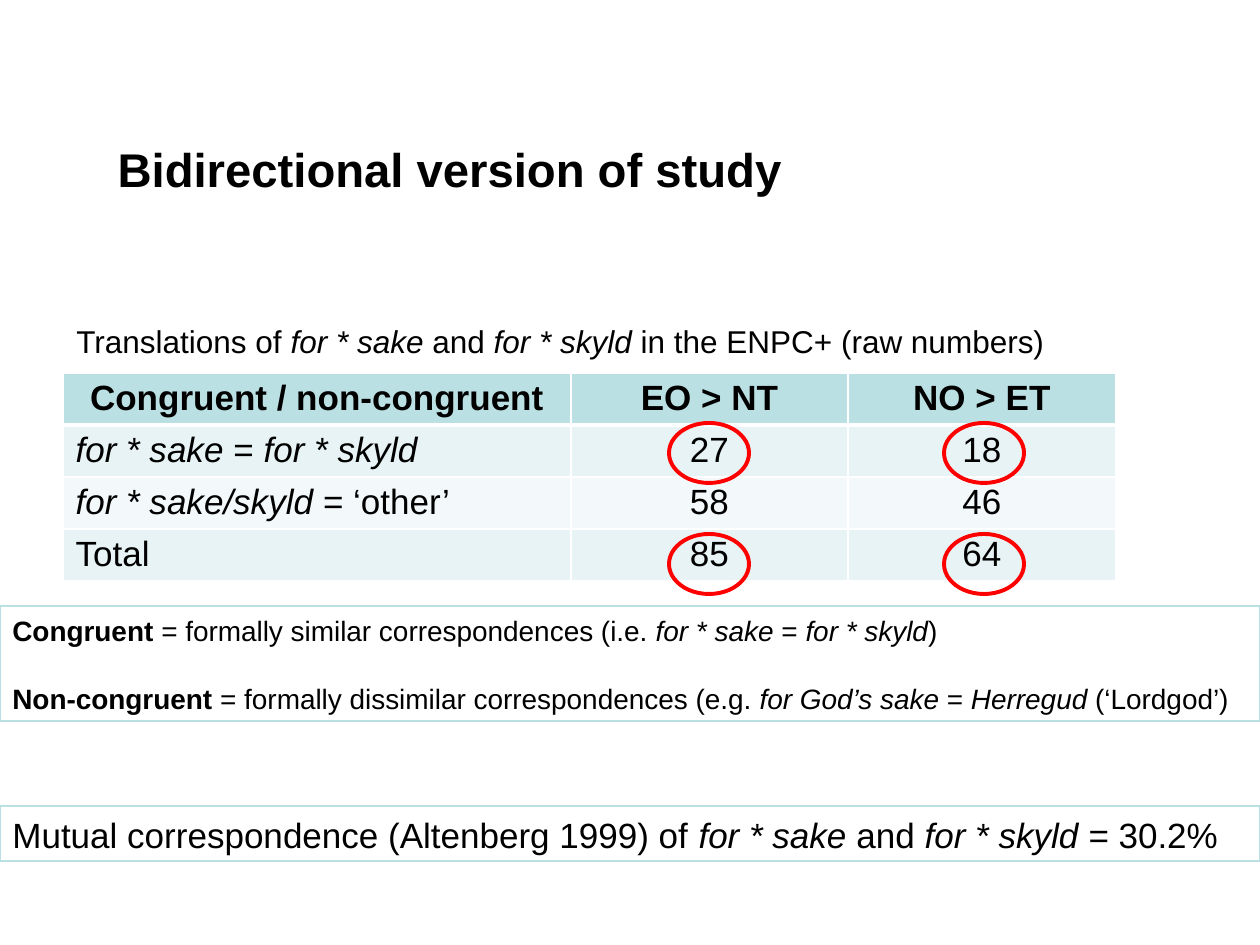
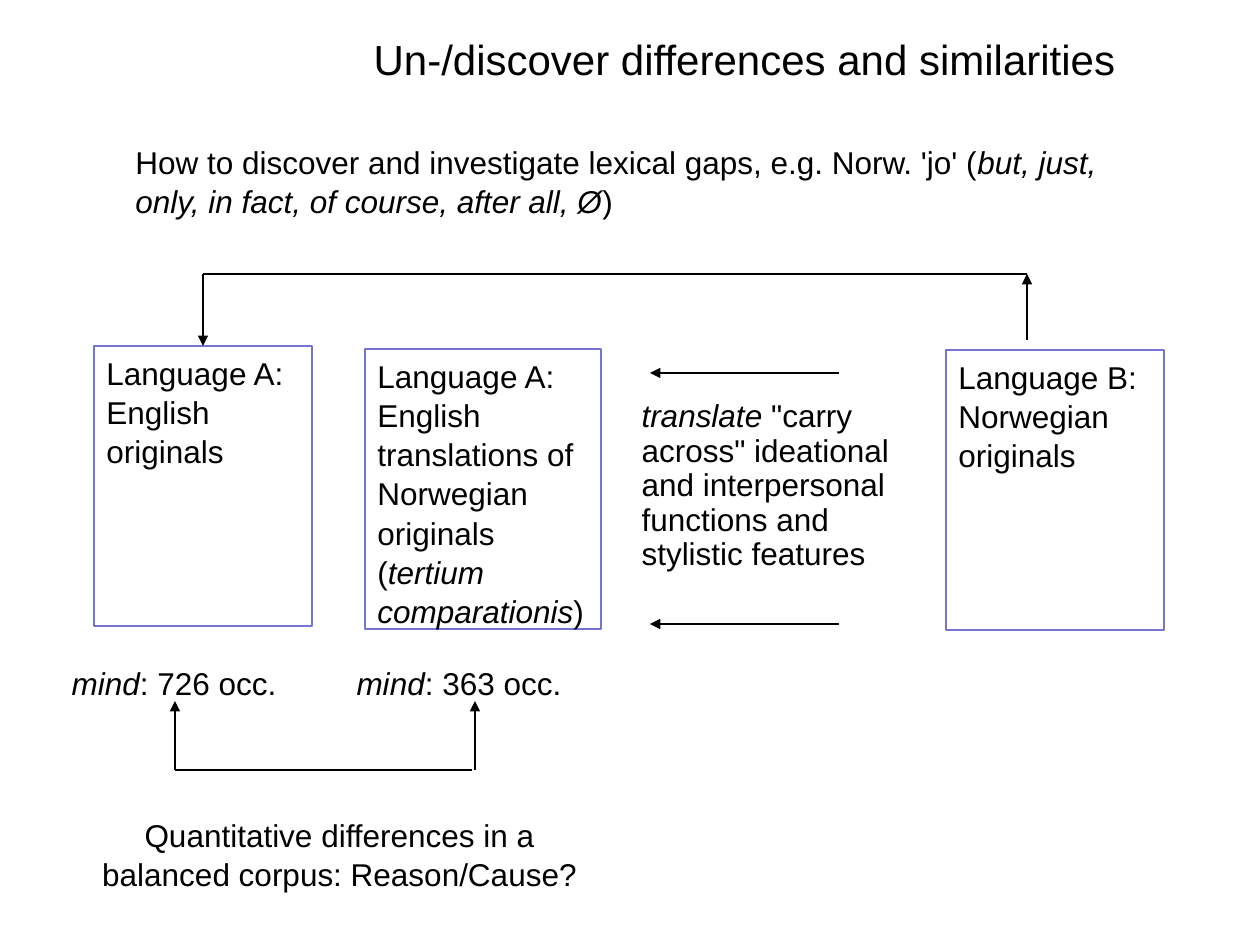
from dataclasses import dataclass

from lxml import etree
from pptx import Presentation
from pptx import util as u
from pptx.dml.color import RGBColor
from pptx.enum import shapes, text
from pptx.oxml.ns import qn

SCALE = 914400 / 126  # EMU per px
LEFT, CENTER = text.PP_ALIGN.LEFT, text.PP_ALIGN.CENTER
TOP, MIDDLE = text.MSO_ANCHOR.TOP, text.MSO_ANCHOR.MIDDLE


@dataclass(frozen=True)
class Theme:
    font: str = "Arial"
    ink: str = "000000"
    paper: str = "FFFFFF"
    teal: str = "BBE0E3"
    band_dark: str = "E7F3F4"
    band_light: str = "F3F9FA"
    violet: str = "7575D1"
    highlight: str = "FF0000"
    heading: int = 27
    subheading: int = 24
    large: int = 20
    body: int = 18
    small: int = 16
    leading: float = 1.04


def px(*lengths):
    return [round(length * SCALE) for length in lengths]


def rgb(color):
    return RGBColor.from_string(color)


def write(frame, *paragraphs, theme, size, bold=False, align=LEFT,
          anchor=TOP, gap=0, leading=None):
    """Fill a text frame; _..._ marks italics and ^...^ marks bold."""
    frame.word_wrap = True
    frame.vertical_anchor = anchor
    for index, content in enumerate(paragraphs):
        paragraph = frame.paragraphs[0] if index == 0 else frame.add_paragraph()
        paragraph.alignment = align
        paragraph.space_before = u.Pt(gap if index else 0)
        if leading:
            paragraph.line_spacing = leading
        for strong, chunk in enumerate(content.split("^")):
            for slanted, piece in enumerate(chunk.split("_")):
                if not piece:
                    continue
                run = paragraph.add_run()
                run.text = piece
                run.font.name = theme.font
                run.font.size = u.Pt(size)
                run.font.bold = bold or strong % 2 == 1
                run.font.italic = slanted % 2 == 1
                run.font.color.rgb = rgb(theme.ink)


class Deck:
    def __init__(self, theme):
        self.theme = theme
        self.file = Presentation()
        self.file.slide_width, self.file.slide_height = px(1260, 945)
        self.slide = None

    def start_slide(self, title, box, size, **style):
        self.slide = self.file.slides.add_slide(self.file.slide_layouts[5])
        heading = self.slide.shapes.title
        heading.left, heading.top, heading.width, heading.height = px(*box)
        heading.text_frame.auto_size = text.MSO_AUTO_SIZE.NONE
        write(heading.text_frame, title, theme=self.theme, size=size, **style)

    def label(self, box, *paragraphs, size=None, **style):
        shape = self.slide.shapes.add_textbox(*px(*box))
        write(shape.text_frame, *paragraphs, theme=self.theme,
              size=size or self.theme.body,
              leading=self.theme.leading, **style)

    def outline(self, kind, box, color, weight):
        shape = self.slide.shapes.add_shape(kind, *px(*box))
        shape.shadow.inherit = False
        shape.fill.background()
        shape.line.color.rgb = rgb(color)
        shape.line.width = u.Pt(weight)
        return shape

    def panel(self, box, *paragraphs, color, weight, size=None, **style):
        shape = self.outline(shapes.MSO_SHAPE.RECTANGLE, box, color, weight)
        write(shape.text_frame, *paragraphs, theme=self.theme,
              size=size or self.theme.body,
              leading=self.theme.leading, **style)

    def ring(self, box):
        self.outline(shapes.MSO_SHAPE.OVAL, box, self.theme.highlight, 2.25)

    def line(self, start, end, arrow=True):
        connector = self.slide.shapes.add_connector(
            shapes.MSO_CONNECTOR.STRAIGHT, *px(*start, *end))
        connector.line.color.rgb = rgb(self.theme.ink)
        connector.line.width = u.Pt(0.75)
        if arrow:
            stroke = connector.line._get_or_add_ln()
            etree.SubElement(stroke, qn("a:tailEnd"), type="triangle")
        etree.SubElement(connector._element.spPr, qn("a:effectLst"))

    def table(self, corner, widths, heights):
        frame = self.slide.shapes.add_table(
            len(heights), len(widths), *px(*corner, sum(widths), sum(heights)))
        grid = frame.table
        grid.first_row = grid.horz_banding = False
        for column, width in zip(grid.columns, px(*widths)):
            column.width = width
        for row, height in zip(grid.rows, px(*heights)):
            row.height = height
        return grid

    def paint_cell(self, cell, fill, bottom=1):
        properties = cell._tc.get_or_add_tcPr()
        for side, weight in zip("LRTB", (1, 1, 1, bottom)):
            edge = etree.SubElement(properties, qn(f"a:ln{side}"),
                                    w=str(u.Pt(weight)))
            color = etree.SubElement(edge, qn("a:solidFill"))
            etree.SubElement(color, qn("a:srgbClr"), val=self.theme.paper)
        cell.fill.solid()
        cell.fill.fore_color.rgb = rgb(fill)


def build_study(deck):
    theme = deck.theme
    deck.start_slide("Bidirectional version of study", (105, 117, 1091, 104),
                     theme.heading, bold=True, anchor=MIDDLE)

    counts = [
        ("Congruent / non-congruent", "EO > NT", "NO > ET"),
        ("_for * sake_ = _for * skyld_", "27", "18"),
        ("_for * sake/skyld_ = ‘other’", "58", "46"),
        ("Total", "85", "64"),
    ]
    fills = (theme.teal, theme.band_dark, theme.band_light, theme.band_dark)
    grid = deck.table((63, 373), (508, 277, 268), [52] * len(counts))
    for r, (row, fill) in enumerate(zip(counts, fills)):
        header = r == 0
        for c, value in enumerate(row):
            cell = grid.cell(r, c)
            deck.paint_cell(cell, fill, bottom=3 if header else 1)
            write(cell.text_frame, value, theme=theme, size=theme.large,
                  bold=header, align=CENTER if header or c else LEFT)

    deck.label((64, 314, 1052, 50),
               "Translations of _for * sake_ and _for * skyld _"
               "in the ENPC+ (raw numbers)")
    deck.panel((0, 806, 1260, 55),
               "Mutual correspondence (Altenberg 1999) of _for * sake_ and "
               "_for * skyld = _30.2%",
               color=theme.teal, weight=0.75, size=theme.large)
    deck.panel((0, 606, 1260, 115),
               "^Congruent^ = formally similar correspondences (i.e. "
               "_for * sake_ = _for * skyld_)",
               "^Non-congruent^ = formally dissimilar correspondences (e.g. "
               "_for God’s sake _= _Herregud_ (‘Lordgod’)",
               color=theme.teal, weight=0.75, size=theme.small, gap=19)
    for left in (669, 944):
        for top in (423, 534):
            deck.ring((left, top, 80, 60))


def build_differences(deck):
    theme = deck.theme
    deck.start_slide("Un-/discover differences and similarities",
                     (361, 27, 803, 63), theme.subheading)

    grid = deck.table((59, 116), [285] * 4, (130, 77, 338, 147, 130))
    for r in range(5):
        for c in range(4):
            deck.paint_cell(grid.cell(r, c), theme.paper)
    grid.cell(0, 0).merge(grid.cell(0, 3))
    grid.cell(4, 0).merge(grid.cell(4, 1))
    translation = grid.cell(2, 2)
    translation.margin_top = px(77)[0]
    write(translation.text_frame,
          '_translate_ "carry across" ideational and interpersonal functions '
          "and stylistic features",
          theme=theme, size=theme.body, leading=0.98)
    for c, occurrences in enumerate((726, 363)):
        write(grid.cell(3, c).text_frame, f"_mind_: {occurrences} occ.",
              theme=theme, size=theme.body)

    for y in (373, 624):
        deck.line((839, y), (650, y))

    corpora = [
        ((946, 350, 218, 280), "Language B:", "Norwegian originals"),
        ((365, 349, 236, 280), "Language A:",
         "English translations of Norwegian originals "
         "(_tertium comparationis_)"),
        ((94, 346, 218, 280), "Language A:", "English originals"),
    ]
    for box, language, contents in corpora:
        deck.panel(box, language, contents, color=theme.violet, weight=1)

    for x in (175, 475):
        deck.line((x, 770), (x, 701))
    deck.line((175, 770), (472, 770), arrow=False)
    deck.label((78, 808, 523, 89),
               "Quantitative differences in a balanced corpus: Reason/Cause?",
               align=CENTER)
    deck.label((123, 135, 1041, 89),
               "How to discover and investigate lexical gaps, e.g. Norw. 'jo' "
               "(_but, just, only, in fact, of course, after all, Ø_)")

    deck.line((203, 274), (203, 346))
    deck.line((1027, 340), (1027, 274))
    deck.line((1027, 274), (203, 274), arrow=False)


def main():
    deck = Deck(Theme())
    build_study(deck)
    build_differences(deck)
    deck.file.save("out.pptx")


if __name__ == "__main__":
    main()
